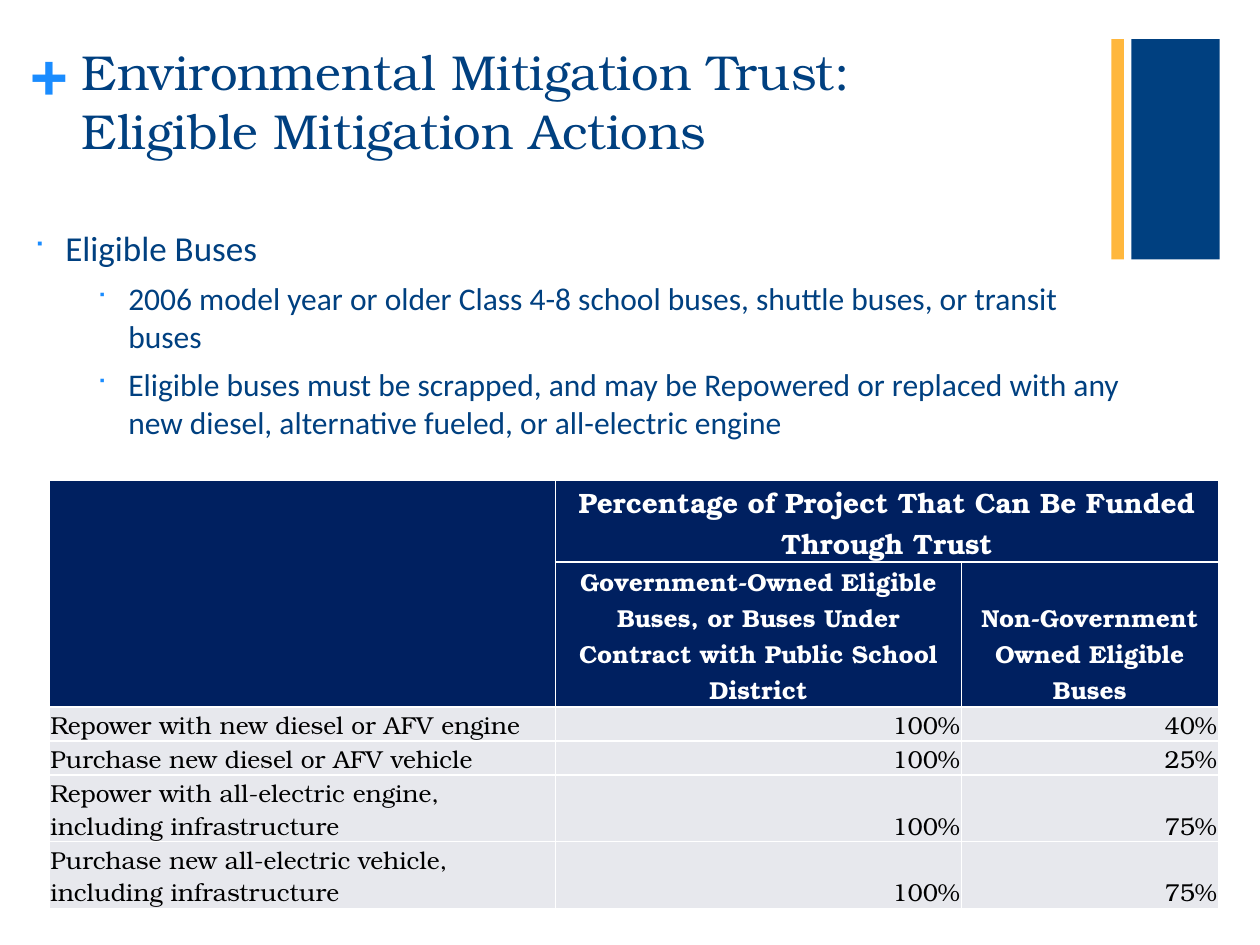
import pptx
import pptx.util
import pptx.dml.color
import pptx.enum.shapes
import pptx.enum.text
import pptx.oxml

Inches = pptx.util.Inches
Pt = pptx.util.Pt
RGB = pptx.dml.color.RGBColor
ALIGN = pptx.enum.text.PP_ALIGN
ANCHOR = pptx.enum.text.MSO_ANCHOR

BLUE = RGB(0x00, 0x40, 0x80)
GOLD = RGB(0xFF, 0xB7, 0x3D)
SKY = RGB(0x1A, 0x8C, 0xFF)
NAVY = RGB(0x00, 0x20, 0x60)
GREY = RGB(0xE7, 0xE8, 0xED)
WHITE = RGB(0xFF, 0xFF, 0xFF)
BLACK = RGB(0x00, 0x00, 0x00)
SERIF, SANS = "TeX Gyre Bonum", "Calibri"
NS = 'xmlns:a="http://schemas.openxmlformats.org/drawingml/2006/main"'


def style(para, size, name, color, bold=False):
    """Format every run of a paragraph."""
    for run in para.runs:
        for key, value in {"size": Pt(size), "name": name, "bold": bold}.items():
            setattr(run.font, key, value)
        run.font.color.rgb = color


def add_xml(parent, text):
    parent.append(pptx.oxml.parse_xml(text))


deck = pptx.Presentation()
deck.slide_width, deck.slide_height = Inches(10), Inches(7.5)
slide = deck.slides.add_slide(deck.slide_layouts[5])
shapes = slide.shapes

# Corner bars
for left, width, color in [(8.98, 0.7, BLUE), (8.82, 0.1, GOLD)]:
    bar = shapes.add_shape(pptx.enum.shapes.MSO_SHAPE.RECTANGLE,
                           Inches(left), Inches(0.31), Inches(width), Inches(1.75))
    bar.shadow.inherit = False
    bar.fill.solid()
    bar.fill.fore_color.rgb = color
    bar.line.fill.background()

# Plus sign
plus = shapes.add_textbox(Inches(0.24), Inches(0.25), Inches(0.29), Inches(0.61))
frame = plus.text_frame
for side in ("left", "top", "right", "bottom"):
    setattr(frame, "margin_" + side, 0)
frame.text = "+"
style(frame.paragraphs[0], 36, SERIF, SKY, True)

# Title
title = shapes.title
for key, value in {"left": 0.55, "top": 0.28, "width": 7.02, "height": 1.16}.items():
    setattr(title, key, Inches(value))
frame = title.text_frame
frame.text = "Environmental Mitigation Trust:\vEligible Mitigation Actions"
frame.auto_size = pptx.enum.text.MSO_AUTO_SIZE.NONE
frame.vertical_anchor = ANCHOR.TOP
para = frame.paragraphs[0]
para.alignment = ALIGN.LEFT
style(para, 28, SERIF, BLUE)

# Bullets
points = [
    (0, "Eligible Buses"),
    (2, "2006 model year or older Class 4-8 school buses, shuttle buses, "
        "or transit buses"),
    (2, "Eligible buses must be scrapped, and may be Repowered or replaced with "
        "any new diesel, alternative fueled, or all-electric engine"),
]
body = shapes.add_textbox(Inches(-0.08), Inches(1.75), Inches(9.14), Inches(5.64))
frame = body.text_frame
frame.word_wrap = True
for i, (level, text) in enumerate(points):
    para = frame.add_paragraph() if i else frame.paragraphs[0]
    para.text = text
    para.level = level
    para.space_after = Pt(6)
    style(para, 18 if level else 20, SANS, BLUE)
    props = para._p.get_or_add_pPr()
    props.set("marL", str(Inches(1 if level else 0.5)))
    props.set("indent", str(Inches(-0.25)))
    add_xml(props, f'<a:buClr {NS}><a:srgbClr val="{SKY}"/></a:buClr>')
    add_xml(props, f'<a:buSzPct {NS} val="75000"/>')
    add_xml(props, f'<a:buFont {NS} typeface="Wingdings" charset="2"/>')
    add_xml(props, f'<a:buChar {NS} char="■"/>')

# Funding table
rows = [
    ("", "Percentage of Project That Can Be Funded Through Trust", ""),
    ("", "Government-Owned Eligible Buses, or Buses Under Contract with "
         "Public School District", "Non-Government Owned Eligible Buses"),
    ("Repower with new diesel or AFV engine", "100%", "40%"),
    ("Purchase new diesel or AFV vehicle", "100%", "25%"),
    ("Repower with all-electric engine, including infrastructure", "100%", "75%"),
    ("Purchase new all-electric vehicle, including infrastructure", "100%", "75%"),
]
widths = (4.02, 3.22, 2.04)
heights = (0.65, 1.15, 0.27, 0.27, 0.53, 0.53)
table = shapes.add_table(len(rows), len(widths), Inches(0.39), Inches(3.81),
                         Inches(sum(widths)), Inches(sum(heights))).table
for col, width in zip(table.columns, widths):
    col.width = Inches(width)
for row, height in zip(table.rows, heights):
    row.height = Inches(height)
table.cell(0, 0).merge(table.cell(1, 0))
table.cell(0, 1).merge(table.cell(0, 2))

inset = {"margin_left": Inches(0.01), "margin_right": Inches(0.01),
         "margin_top": Inches(0.01), "margin_bottom": 0,
         "vertical_anchor": ANCHOR.BOTTOM}
for r, texts in enumerate(rows):
    head = r < 2
    for c, text in enumerate(texts):
        cell = table.cell(r, c)
        for key, value in inset.items():
            setattr(cell, key, value)
        for side in "LRTB":
            add_xml(cell._tc.get_or_add_tcPr(),
                    f'<a:ln{side} {NS} w="{Pt(1)}"><a:solidFill>'
                    f'<a:srgbClr val="{WHITE}"/></a:solidFill></a:ln{side}>')
        cell.fill.solid()
        cell.fill.fore_color.rgb = NAVY if head else GREY
        if text:
            cell.text = text
            para = cell.text_frame.paragraphs[0]
            para.alignment = (ALIGN.CENTER if head
                              else ALIGN.RIGHT if c else ALIGN.LEFT)
            style(para, 14 if r else 16, SERIF, WHITE if head else BLACK, head)

deck.save("out.pptx")
